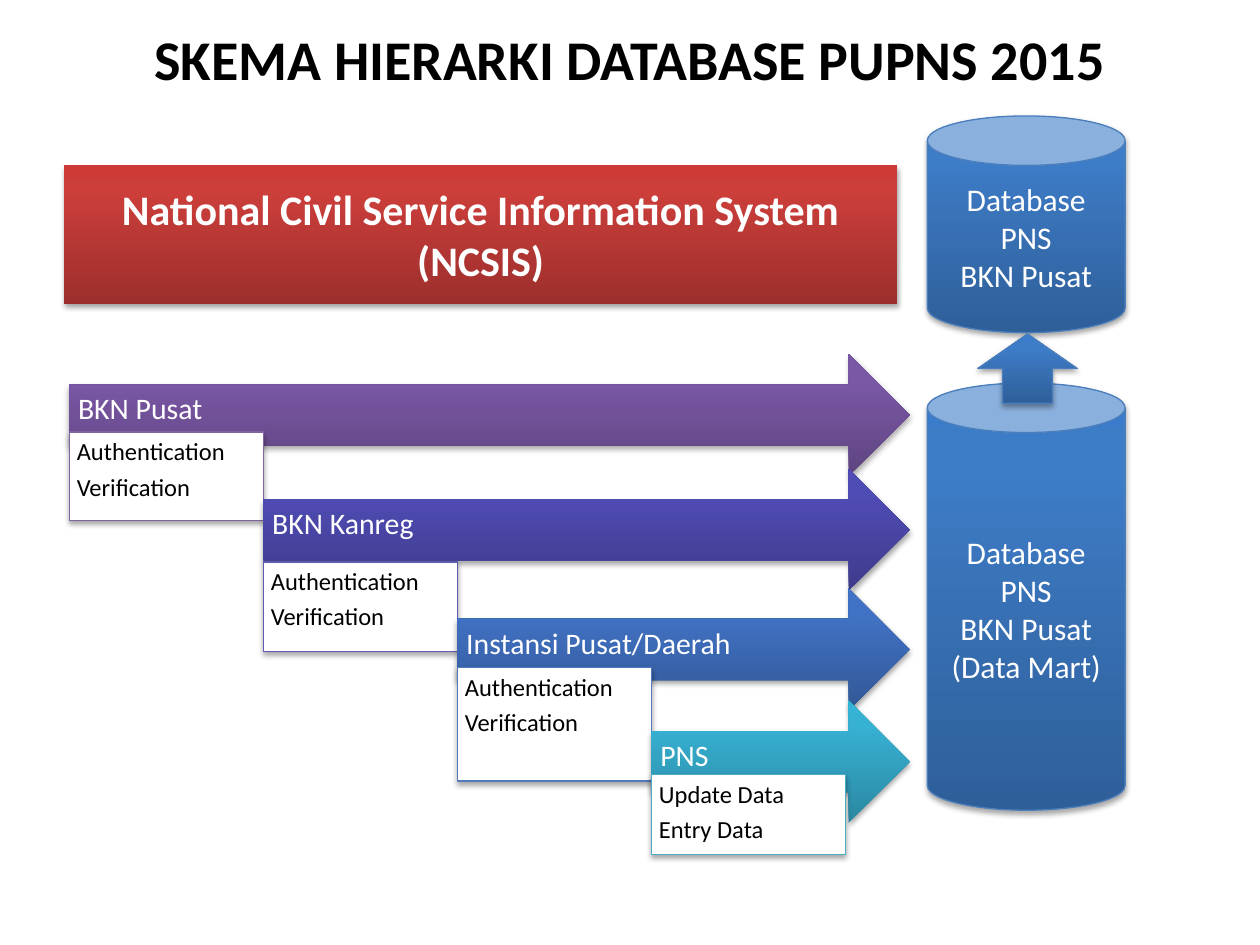
"""Build the PUPNS 2015 database hierarchy slide."""
from dataclasses import dataclass

import lxml.etree
import pptx
import pptx.dml.color
import pptx.enum.shapes
import pptx.enum.text
import pptx.oxml
import pptx.oxml.ns
import pptx.util

Inches = pptx.util.Inches
Pt = pptx.util.Pt
RGB = pptx.dml.color.RGBColor.from_string
SHAPE = pptx.enum.shapes.MSO_SHAPE
ALIGN = pptx.enum.text.PP_ALIGN
ANCHOR = pptx.enum.text.MSO_ANCHOR
qn = pptx.oxml.ns.qn


@dataclass(frozen=True)
class Theme:
    font: str = "Calibri"
    dark: str = "000000"
    light: str = "FFFFFF"
    blue: tuple = ("2F5F99", "3D7CC7", "3A7CCB")
    blue_line: str = "4B7EBC"
    red: tuple = ("9C2F2D", "CB3E3A", "CE3B37")
    title_size: int = 32
    banner_size: int = 24
    database_size: int = 18
    level_size: int = 17
    task_size: int = 14


theme = Theme()


def add_block(kind, box, fill, line=None):
    block = slide.shapes.add_shape(kind, *map(Inches, box))
    if isinstance(fill, str):
        block.fill.solid()
        block.fill.fore_color.rgb = RGB(fill)
    else:
        block.fill.gradient()
        block.fill.gradient_angle = 90
        stops = block._element.spPr.find(".//" + qn("a:gsLst"))
        for stop in list(stops):
            stops.remove(stop)
        for position, color in zip((0, 80000, 100000), fill):
            stop = lxml.etree.SubElement(stops, qn("a:gs"), pos=str(position))
            lxml.etree.SubElement(stop, qn("a:srgbClr"), val=color)
    if line:
        block.line.color.rgb = RGB(line)
        block.line.width = Pt(0.75)
    else:
        block.line.fill.background()
    block.shadow.inherit = False
    effects = block._element.spPr.find(qn("a:effectLst"))
    effects.append(pptx.oxml.parse_xml(
        f'<a:outerShdw {pptx.oxml.ns.nsdecls("a")} blurRad="40000" dist="23000" '
        'dir="5400000" rotWithShape="0"><a:srgbClr val="000000">'
        '<a:alpha val="35000"/></a:srgbClr></a:outerShdw>'))
    return block


def write(shape, lines, size, color, align=ALIGN.CENTER, anchor=ANCHOR.MIDDLE,
          bold=False, insets=(0.1, 0.05, 0.1, 0.05), spacing=None, after=None):
    frame = shape.text_frame
    frame.text = "\n".join(lines)
    frame.word_wrap = True
    frame.vertical_anchor = anchor
    (frame.margin_left, frame.margin_top,
     frame.margin_right, frame.margin_bottom) = map(Inches, insets)
    for paragraph in frame.paragraphs:
        paragraph.alignment = align
        paragraph.line_spacing = spacing
        paragraph.space_after = after
        paragraph.font.name = theme.font
        paragraph.font.size = Pt(size)
        paragraph.font.bold = bold
        paragraph.font.color.rgb = RGB(color)


deck = pptx.Presentation()
deck.slide_width, deck.slide_height = Inches(10), Inches(7.5)
slide = deck.slides.add_slide(deck.slide_layouts[5])

title = slide.shapes.title
title.left, title.top, title.width, title.height = map(Inches, (0.5, 0.16, 9, 0.61))
write(title, ["SKEMA HIERARKI DATABASE PUPNS 2015"], theme.title_size, theme.dark, bold=True)

review = ["Authentication", "Verification"]
levels = [
    ("BKN Pusat", 2.81, ("5F4480", "7B58A6", "7C57A8"), review, 3.43, 0.7, "8064A2"),
    ("BKN Kanreg", 3.72, ("3E3B8B", "504CB5", "4F4BB8"), review, 4.46, 0.71, "5F5BAE"),
    ("Instansi Pusat/Daerah", 4.67, ("325897", "4172C4", "3F72C7"), review, 5.3, 0.9, "537ABA"),
    ("PNS", 5.56, ("2A88A2", "37B1D2", "34B4D6"), ["Update Data", "Entry Data"],
     6.15, 0.63, "4BACC6"),
]
first_left, arrow_tip, step = 0.55, 7.22, 1.54
for index, (name, top, colors, tasks, task_top, task_height, outline) in enumerate(levels):
    left = first_left + index * step
    level = add_block(SHAPE.RIGHT_ARROW, (left, top, arrow_tip - left, 0.97), colors)
    write(level, [name], theme.level_size, theme.light, ALIGN.LEFT,
          insets=(0.07, 0.07, 0.28, 0.15), spacing=0.9)
    task_box = add_block(SHAPE.RECTANGLE, (left, task_top, step, task_height),
                         theme.light, outline)
    write(task_box, tasks, theme.task_size, theme.dark, ALIGN.LEFT, ANCHOR.TOP,
          insets=(0.06,) * 4, spacing=0.9, after=Pt(5))

database = ["Database", "PNS", "BKN Pusat"]
for top, height, lines in ((3.04, 3.39, database + ["(Data Mart)"]), (0.92, 1.72, database)):
    store = add_block(SHAPE.CAN, (7.36, top, 1.57, height), theme.blue, theme.blue_line)
    write(store, lines, theme.database_size, theme.light)

add_block(SHAPE.UP_ARROW, (7.76, 2.65, 0.79, 0.55), theme.blue, theme.blue_line)

banner = add_block(SHAPE.RECTANGLE, (0.51, 1.31, 6.61, 1.1), theme.red)
write(banner, ["National Civil Service Information System (NCSIS)"],
      theme.banner_size, theme.light, bold=True)

deck.save("out.pptx")
